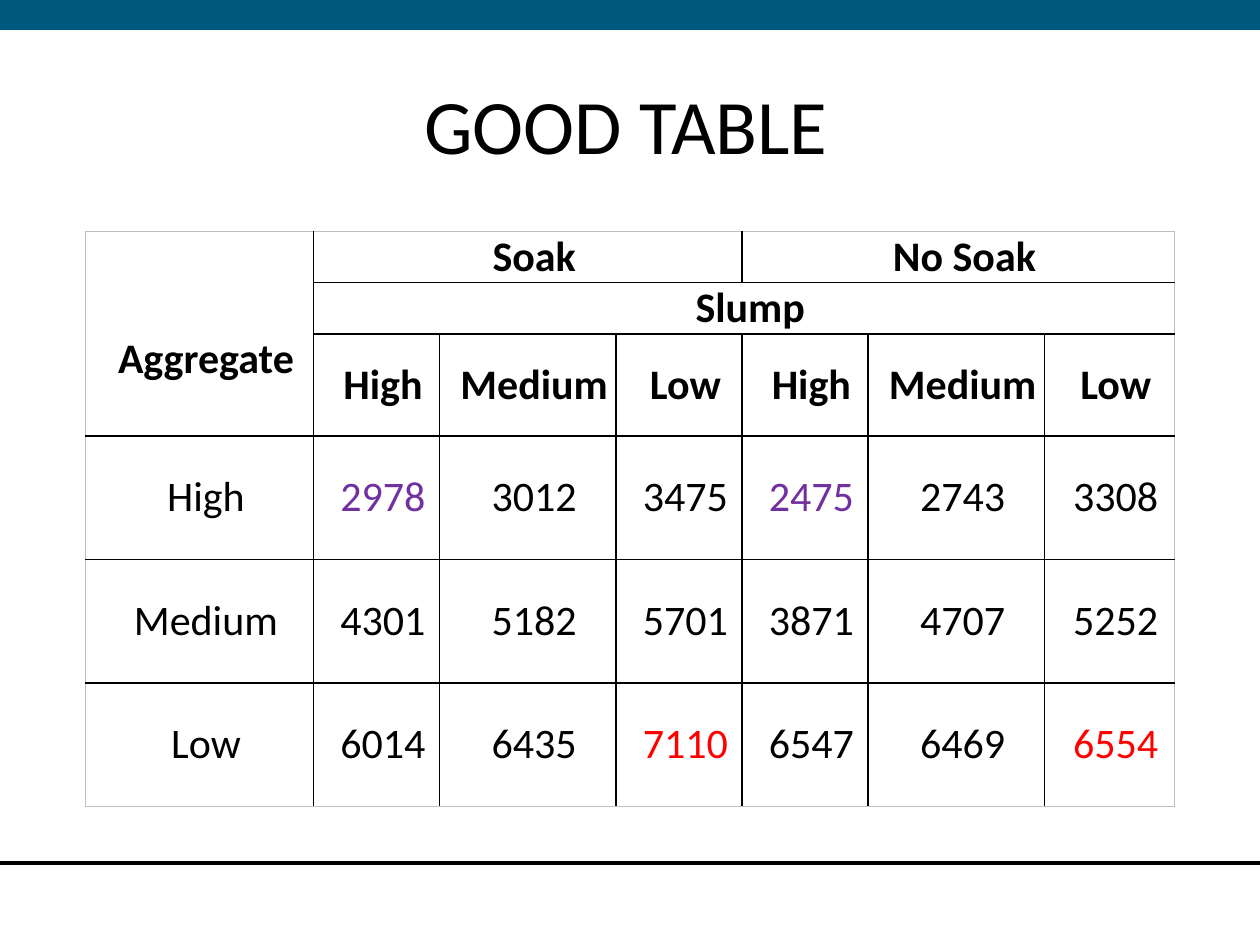
from lxml import etree
from pptx import Presentation
from pptx import util as u
from pptx.dml.color import RGBColor
from pptx.enum import shapes, text
from pptx.oxml import ns

Inches, Pt = u.Inches, u.Pt
INK = {"bar": "005A80", "text": "000000", "edge": "BFBFBF",
       "min": "7030A0", "max": "FF0000"}

WIDTHS = [1.81, 1, 1.4, 1, 1, 1.4, 1.03]
HEIGHTS = [0.4, 0.41, 0.81, 0.98, 0.98, 0.98]
LEVELS = ["High", "Medium", "Low"]
ROWS = [
    ["Aggregate", "Soak", "", "", "No Soak", "", ""],
    ["", "Slump", "", "", "", "", ""],
    [""] + LEVELS * 2,
    ["High", "2978", "3012", "3475", "2475", "2743", "3308"],
    ["Medium", "4301", "5182", "5701", "3871", "4707", "5252"],
    ["Low", "6014", "6435", "7110", "6547", "6469", "6554"],
]
# First and last cell of each merged block, as (row, column)
SPANS = [((0, 0), (2, 0)), ((0, 1), (0, 3)), ((0, 4), (0, 6)), ((1, 1), (1, 6))]
HEADS = 3
MARKS = {"2978": "min", "2475": "min", "7110": "max", "6554": "max"}


def paint(name):
    return RGBColor.from_string(INK[name])


def write(frame, words, size=24, bold=False, color="text",
          align=text.PP_ALIGN.CENTER, indent=0, lead=1.0):
    frame.word_wrap = True
    para = frame.paragraphs[0]
    para.alignment = align
    para.line_spacing = lead
    if indent:
        props = para._p.get_or_add_pPr()
        props.set("marL", str(Inches(indent)))
        props.set("indent", "0")
    run = para.add_run()
    run.text = words
    font = run.font
    font.name, font.size, font.bold = "Calibri", Pt(size), bold
    font.color.rgb = paint(color)


def border(cell, sides):
    """Draw cell sides given as {tag: (colour, points)}."""
    props = cell._tc.get_or_add_tcPr()
    for spot, (tag, (color, width)) in enumerate(sides.items()):
        line = etree.Element(ns.qn("a:" + tag), w=str(Pt(width)))
        fill = etree.SubElement(line, ns.qn("a:solidFill"))
        etree.SubElement(fill, ns.qn("a:srgbClr"), val=INK[color])
        props.insert(spot, line)


def add_bar(slide, left, top, width, height):
    bar = slide.shapes.add_shape(
        shapes.MSO_SHAPE.RECTANGLE,
        Inches(left), Inches(top), Inches(width), Inches(height))
    bar.shadow.inherit = False
    bar.fill.solid()
    bar.fill.fore_color.rgb = paint("bar")
    bar.line.color.rgb = paint("bar")
    bar.line.width = Pt(1)


def add_rule(slide, left, top, width):
    rule = slide.shapes.add_connector(
        shapes.MSO_CONNECTOR.STRAIGHT,
        Inches(left), Inches(top), Inches(left + width), Inches(top))
    rule.line.color.rgb = paint("text")
    rule.line.width = Pt(2)
    etree.SubElement(rule._element.spPr, ns.qn("a:effectLst"))


def add_title(slide, left, top, width, height):
    box = slide.shapes.add_textbox(
        Inches(left), Inches(top), Inches(width), Inches(height))
    box.text_frame.vertical_anchor = text.MSO_ANCHOR.MIDDLE
    write(box.text_frame, "GOOD TABLE", size=44, lead=0.9,
          align=text.PP_ALIGN.LEFT)


def add_grid(slide, left, top):
    grid = slide.shapes.add_table(
        len(ROWS), len(WIDTHS), Inches(left), Inches(top),
        Inches(sum(WIDTHS)), Inches(sum(HEIGHTS))).table
    grid.first_row = grid.horz_banding = False
    for col, width in zip(grid.columns, WIDTHS):
        col.width = Inches(width)
    for row, height in zip(grid.rows, HEIGHTS):
        row.height = Inches(height)
    for first, last in SPANS:
        grid.cell(*first).merge(grid.cell(*last))

    inner, outer = ("text", 1), ("edge", 0.5)
    for r, row in enumerate(ROWS):
        for c, words in enumerate(row):
            cell = grid.cell(r, c)
            cell.fill.background()
            cell.vertical_anchor = text.MSO_ANCHOR.MIDDLE
            cell.margin_left = cell.margin_right = 0
            cell.margin_top = cell.margin_bottom = 0
            right = c + (cell.span_width if cell.is_merge_origin else 1)
            base = r + (cell.span_height if cell.is_merge_origin else 1)
            border(cell, {
                "lnL": inner if c else outer,
                "lnR": inner if right < len(WIDTHS) else outer,
                "lnT": inner if r else outer,
                "lnB": inner if base < len(ROWS) else outer})
            if words:
                write(cell.text_frame, words, bold=r < HEADS, indent=0.1,
                      color=MARKS.get(words, "text"))
    # The corner label sits one line below the middle of its block
    grid.cell(0, 0).margin_top = Inches(0.4)


def main():
    deck = Presentation()
    deck.slide_width, deck.slide_height = Inches(10), Inches(7.5)
    slide = deck.slides.add_slide(deck.slide_layouts[6])
    add_bar(slide, 0, -0.02, 10, 0.25)
    add_rule(slide, 0, 6.85, 10)
    add_title(slide, 3.27, 0.3, 3.46, 1.45)
    add_grid(slide, 0.68, 1.84)
    deck.save("out.pptx")


if __name__ == "__main__":
    main()
